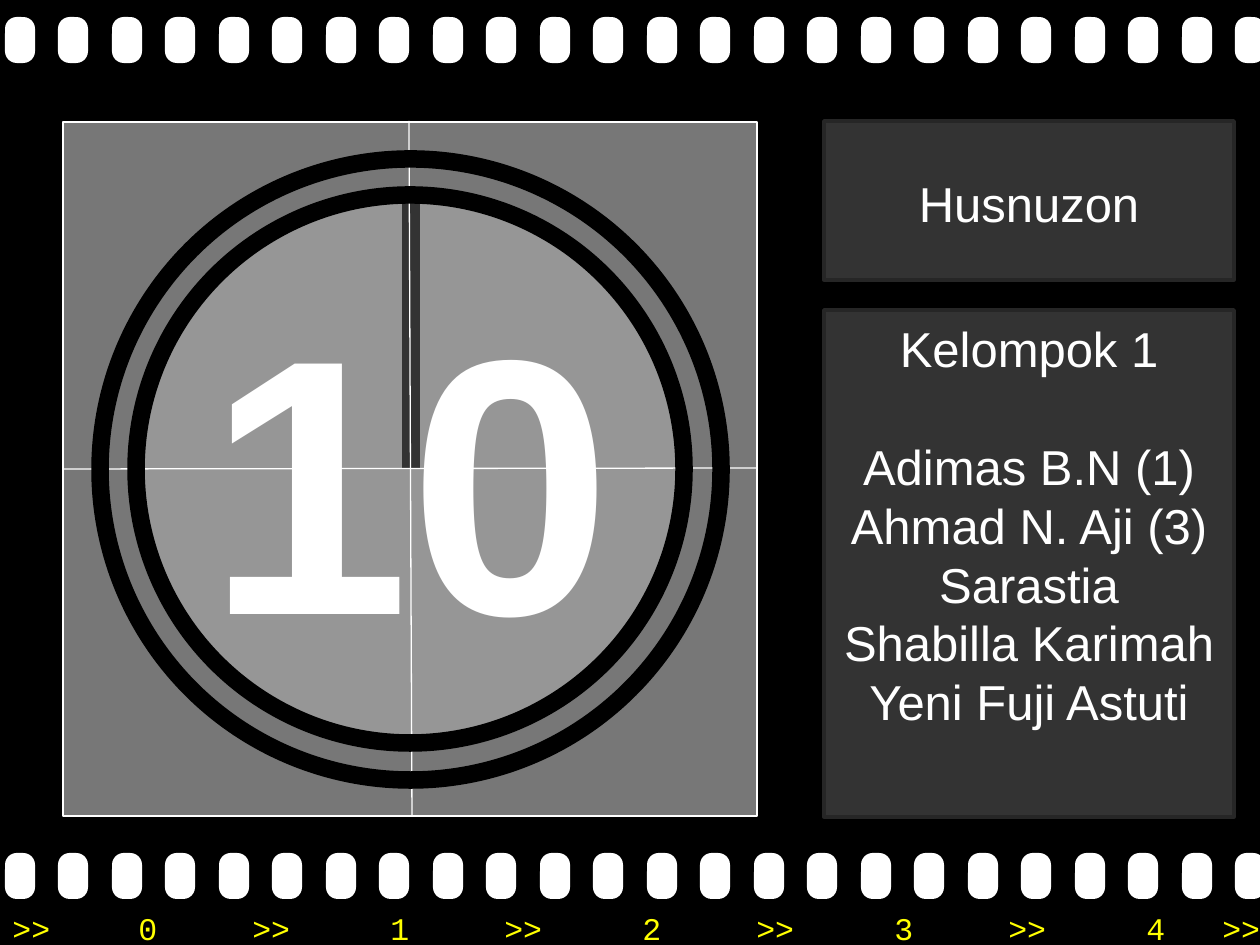
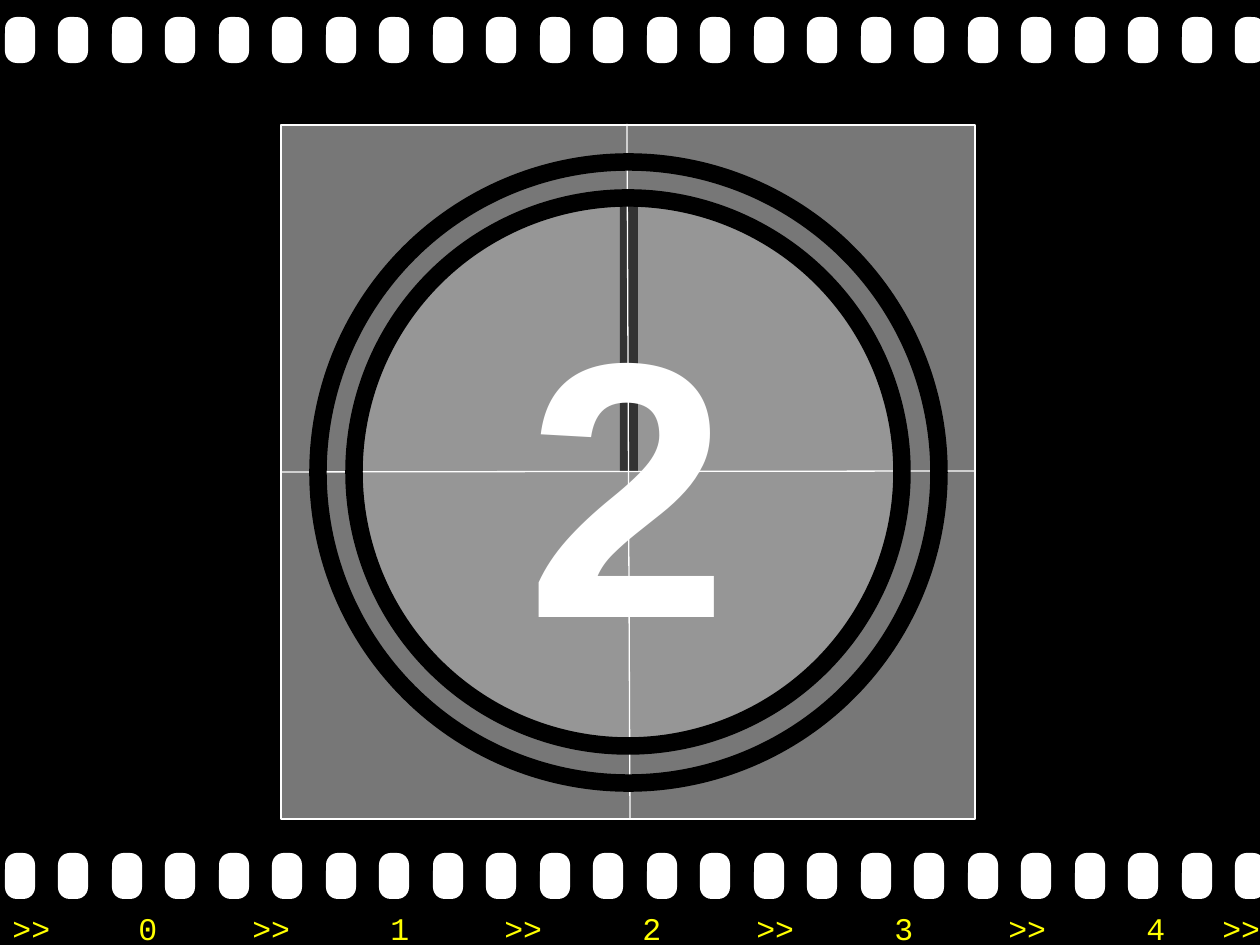
from lxml.etree import SubElement
from pptx import Presentation
from pptx.dml.color import RGBColor
from pptx.enum.shapes import MSO_CONNECTOR, MSO_SHAPE
from pptx.enum.text import MSO_ANCHOR, MSO_AUTO_SIZE, PP_ALIGN
from pptx.oxml.ns import qn
from pptx.util import Pt

PX = 914400 / 126
WIDTH, HEIGHT = 1260, 945
BLACK = RGBColor(0x00, 0x00, 0x00)
WHITE = RGBColor(0xFF, 0xFF, 0xFF)
YELLOW = RGBColor(0xFF, 0xFF, 0x00)
FRAME_GREY = RGBColor(0x77, 0x77, 0x77)
DIAL_GREY = RGBColor(0x96, 0x96, 0x96)
PANEL_GREY = RGBColor(0x33, 0x33, 0x33)
EDGE_GREY = RGBColor(0x26, 0x26, 0x26)
HOLES = 24
LINE_HEIGHT = 33.6


def emu(*lengths):
    return [round(n * PX) for n in lengths]


def write(p, text, size=28, color=WHITE, font="Arial", bold=False, align=PP_ALIGN.CENTER,
          leading=None, after=0):
    p.alignment = align
    p.space_before = Pt(0)
    p.space_after = Pt(after)
    if leading:
        p.line_spacing = Pt(leading)
    r = p.add_run()
    r.text = text
    r.font.name, r.font.size, r.font.bold = font, Pt(size), bold
    r.font.color.rgb = color


class Film:
    def __init__(self):
        self.prs = Presentation()
        self.prs.slide_width, self.prs.slide_height = emu(WIDTH, HEIGHT)
        self.s = None

    def slide(self, layout):
        self.s = self.prs.slides.add_slide(self.prs.slide_layouts[layout])

    def paint(self, sp, fill=None, line=None, width=0.75):
        if fill is None:
            sp.fill.background()
        else:
            sp.fill.solid()
            sp.fill.fore_color.rgb = fill
        if line is None:
            sp.line.fill.background()
        else:
            sp.line.color.rgb = line
            sp.line.width = Pt(width)

    def shape(self, kind, x, y, w, h, **paint):
        sp = self.s.shapes.add_shape(kind, *emu(x, y, w, h))
        sp.shadow.inherit = False
        self.paint(sp, **paint)
        return sp

    def line(self, x1, y1, x2, y2):
        cn = self.s.shapes.add_connector(MSO_CONNECTOR.STRAIGHT, *emu(x1, y1, x2, y2))
        cn.line.color.rgb = WHITE
        cn.line.width = Pt(0.75)
        SubElement(cn.element.spPr, qn("a:effectLst"))

    def panel(self, index, x, y, w, h, lines, anchor, top, heading_gap=0):
        sp = self.s.placeholders[index]
        sp.left, sp.top, sp.width, sp.height = emu(x, y, w, h)
        self.paint(sp, PANEL_GREY, EDGE_GREY, 2)
        tf = sp.text_frame
        tf.auto_size = MSO_AUTO_SIZE.NONE
        tf.word_wrap = True
        tf.vertical_anchor = anchor
        tf.margin_top, tf.margin_bottom = emu(top, 6)
        for i, text in enumerate(lines):
            p = tf.add_paragraph() if i else tf.paragraphs[0]
            write(p, text, leading=LINE_HEIGHT, after=0 if i else heading_gap)
            pPr = p._p.get_or_add_pPr()
            pPr.set("marL", "0")
            pPr.set("indent", "0")
            SubElement(pPr, qn("a:buNone"))

    def perforations(self, y):
        for i in range(HOLES):
            x = 5 + round(1230 * i / (HOLES - 1))
            hole = self.shape(MSO_SHAPE.ROUNDED_RECTANGLE, x, y, 30, 46, fill=WHITE)
            hole.adjustments[0] = 0.39

    def frame_counter(self):
        tb = self.s.shapes.add_textbox(*emu(0, 903, 1285, 51))
        tf = tb.text_frame
        tf.word_wrap = True
        p = tf.paragraphs[0]
        write(p, ">>" + "".join(f"\t{n}\t>>" for n in range(5)), size=18,
              color=YELLOW, font="Courier New", align=PP_ALIGN.LEFT)
        stops = [x + 252 * n for n in range(5) for x in (126, 240)]
        stops[-1] = 1210
        tabs = SubElement(p._p.get_or_add_pPr(), qn("a:tabLst"))
        for pos in emu(*stops):
            SubElement(tabs, qn("a:tab"), pos=str(pos), algn="l")

    def build_master(self):
        master = self.prs.slide_master
        master.background.fill.solid()
        master.background.fill.fore_color.rgb = BLACK
        present = set(sp.shape_id for sp in self.s.placeholders)
        self.perforations(853)
        self.perforations(17)
        self.frame_counter()
        for sp in list(self.s.shapes):
            if sp.shape_id not in present:
                sp.element.nvSpPr.cNvPr.set("id", str(100 + sp.shape_id))
                master.shapes.element.append(sp.element)

    def countdown(self, x, y, number):
        self.shape(MSO_SHAPE.RECTANGLE, x, y, 694, 694, fill=FRAME_GREY, line=WHITE)
        self.shape(MSO_SHAPE.OVAL, x + 76, y + 73, 544, 548, fill=DIAL_GREY, line=WHITE)
        self.shape(MSO_SHAPE.RECTANGLE, x + 339, y + 74, 18, 272, fill=PANEL_GREY)
        self.line(x + 346, y - 1, x + 349, y + 695)
        self.line(x + 694, y + 346, x, y + 347)
        ring = self.shape(MSO_SHAPE.OVAL, x + 73, y + 73, 548, 548, line=BLACK, width=10)
        tf = ring.text_frame
        tf.word_wrap = False
        tf.vertical_anchor = MSO_ANCHOR.MIDDLE
        write(tf.paragraphs[0], number, size=208, bold=True)
        self.shape(MSO_SHAPE.OVAL, x + 37, y + 37, 621, 621, line=BLACK, width=10)


def main():
    film = Film()
    film.slide(1)
    film.build_master()
    film.countdown(63, 122, "10")
    film.panel(0, 824, 121, 410, 159, ["Husnuzon"], MSO_ANCHOR.MIDDLE, 11)
    film.panel(1, 824, 310, 410, 507,
               ["Kelompok 1", "Adimas B.N (1)", "Ahmad N. Aji (3)", "Sarastia",
                "Shabilla Karimah", "Yeni Fuji Astuti"],
               MSO_ANCHOR.TOP, 9, heading_gap=LINE_HEIGHT)

    film.slide(6)
    film.countdown(281, 125, "2")
    film.prs.save("out.pptx")


if __name__ == "__main__":
    main()
